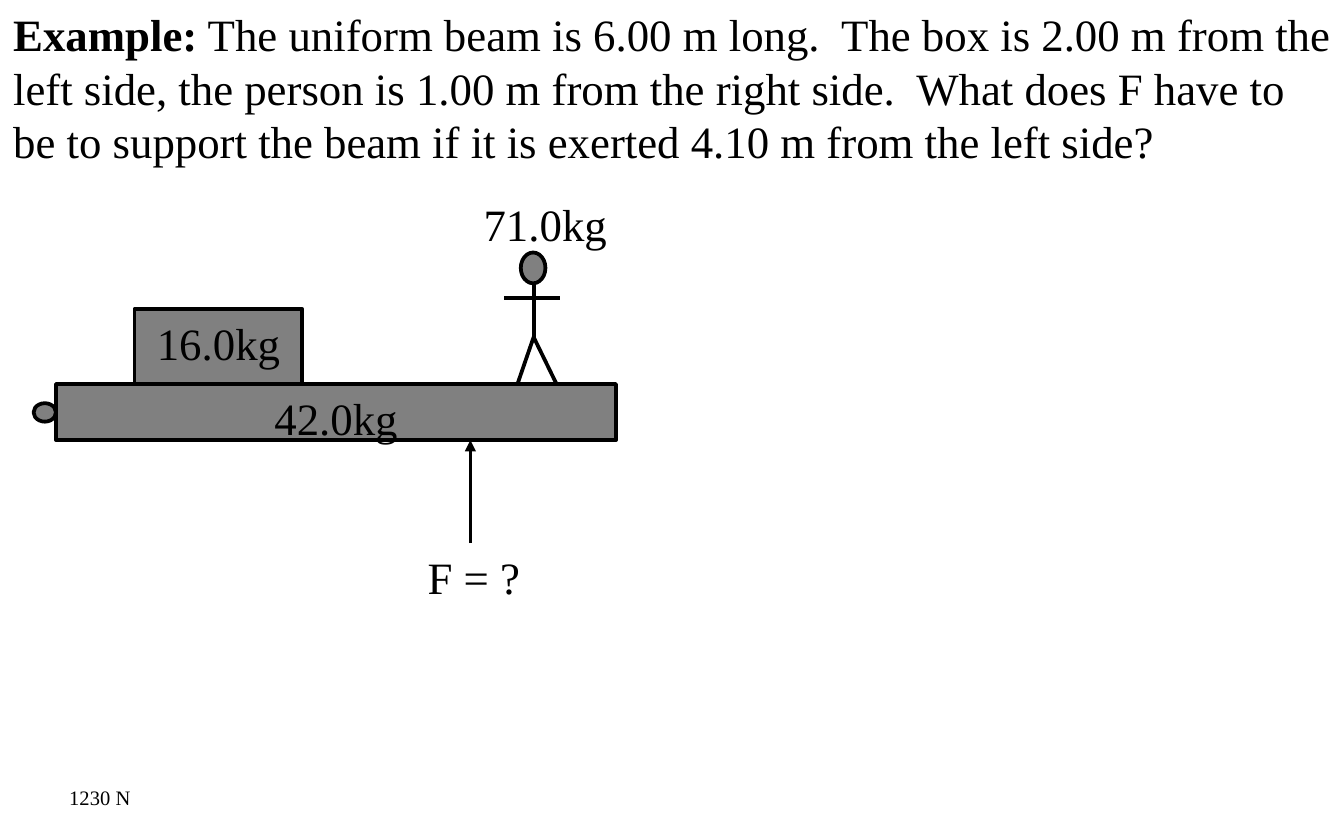
import pptx
import pptx.util
from lxml import etree
from pptx.dml.color import RGBColor
from pptx.enum.shapes import MSO_CONNECTOR, MSO_SHAPE
from pptx.enum.text import MSO_ANCHOR, MSO_AUTO_SIZE, PP_ALIGN
from pptx.oxml.ns import qn


class Theme:
    font = "Times New Roman"
    ink = RGBColor(0x00, 0x00, 0x00)
    body = RGBColor(0x80, 0x80, 0x80)
    text_size = 24
    answer_size = 11
    line_width = 2


class Diagram:
    """Draws on one slide; lengths are cells of a 24 by 15 grid."""

    columns, rows = 24, 15

    def __init__(self, prs, theme):
        self.theme = theme
        self.slide = prs.slides.add_slide(prs.slide_layouts[6])
        self.shapes = self.slide.shapes
        self.col = prs.slide_width / self.columns
        self.row = prs.slide_height / self.rows

    def grid(self, *cells):
        return [round(c * (self.row if i % 2 else self.col))
                for i, c in enumerate(cells)]

    def add_run(self, p, text, size, bold=False):
        r = p.add_run()
        r.text = text
        r.font.name = self.theme.font
        r.font.size = pptx.util.Pt(size)
        r.font.bold = bold
        r.font.color.rgb = self.theme.ink

    def outline(self, line):
        line.color.rgb = self.theme.ink
        line.width = pptx.util.Pt(self.theme.line_width)

    def solid(self, kind, cells, label=None, shapes=None):
        sp = (shapes or self.shapes).add_shape(kind, *self.grid(*cells))
        sp.shadow.inherit = False
        sp.fill.solid()
        sp.fill.fore_color.rgb = self.theme.body
        self.outline(sp.line)
        if label:
            tf = sp.text_frame
            tf.vertical_anchor = MSO_ANCHOR.TOP
            p = tf.paragraphs[0]
            p.alignment = PP_ALIGN.CENTER
            self.add_run(p, label, self.theme.text_size)

    def line(self, start, end, arrow=False, shapes=None):
        cxn = (shapes or self.shapes).add_connector(
            MSO_CONNECTOR.STRAIGHT, *self.grid(*start, *end))
        self.outline(cxn.line)
        if arrow:
            ln = cxn._element.spPr.find(qn("a:ln"))
            etree.SubElement(ln, qn("a:tailEnd"), type="triangle")
        etree.SubElement(cxn._element.spPr, qn("a:effectLst"))

    def text(self, cells, runs, size, wrap=True):
        tf = self.shapes.add_textbox(*self.grid(*cells)).text_frame
        tf.word_wrap = wrap
        tf.auto_size = MSO_AUTO_SIZE.SHAPE_TO_FIT_TEXT
        for text, bold in runs:
            self.add_run(tf.paragraphs[0], text, size, bold)

    def person(self, x, floor):
        shapes = self.shapes.add_group_shape().shapes
        hip, neck, shoulder = floor - 0.84, floor - 1.8, floor - 1.54
        for foot in (x - 0.29, x + 0.41):
            self.line((foot, floor), (x, hip), shapes=shapes)
        self.line((x, hip), (x, neck), shapes=shapes)
        self.solid(MSO_SHAPE.OVAL, (x - 0.23, neck - 0.55, 0.44, 0.55),
                   shapes=shapes)
        self.line((x - 0.53, shoulder), (x + 0.47, shoulder), shapes=shapes)


def main():
    prs = pptx.Presentation()
    prs.slide_width = pptx.util.Inches(10)
    prs.slide_height = pptx.util.Inches(6.25)
    theme = Theme()
    d = Diagram(prs, theme)
    size = theme.text_size
    beam_top, beam_height = 6.86, 1
    box_height = 1.34
    force_x, force_base = 8.4, 9.7

    # Beam and the upward force
    d.solid(MSO_SHAPE.RECTANGLE, (1, beam_top, 10, beam_height), "42.0kg")
    d.line((force_x, force_base), (force_x, beam_top + beam_height), arrow=True)

    # Person standing on the beam
    d.person(9.53, beam_top)
    d.text((8.4, 3.4, 2.7, 1.2), [("71.0kg", False)], size, wrap=False)
    d.text((7.4, force_base, 2.4, 1.2), [("F = ?", False)], size)

    # Box on the beam and the pivot at its left end
    d.solid(MSO_SHAPE.RECTANGLE, (2.4, beam_top - box_height, 3, box_height),
            "16.0kg")
    d.solid(MSO_SHAPE.OVAL, (0.6, 7.2, 0.4, 0.33))

    # Question and answer
    d.text((0, 0, d.columns, 3.15), [
        ("Example:", True),
        (" The uniform beam is 6.00 m long.  The box is 2.00 m from the left "
         "side, the person is 1.00 m from the right side.  What does F have "
         "to be to support the beam if it is exerted 4.10 m from the left "
         "side?", False)], size)
    d.text((1, 13.9, 1.6, 0.7), [("1230 N", False)], theme.answer_size,
           wrap=False)

    prs.save("out.pptx")


if __name__ == "__main__":
    main()
